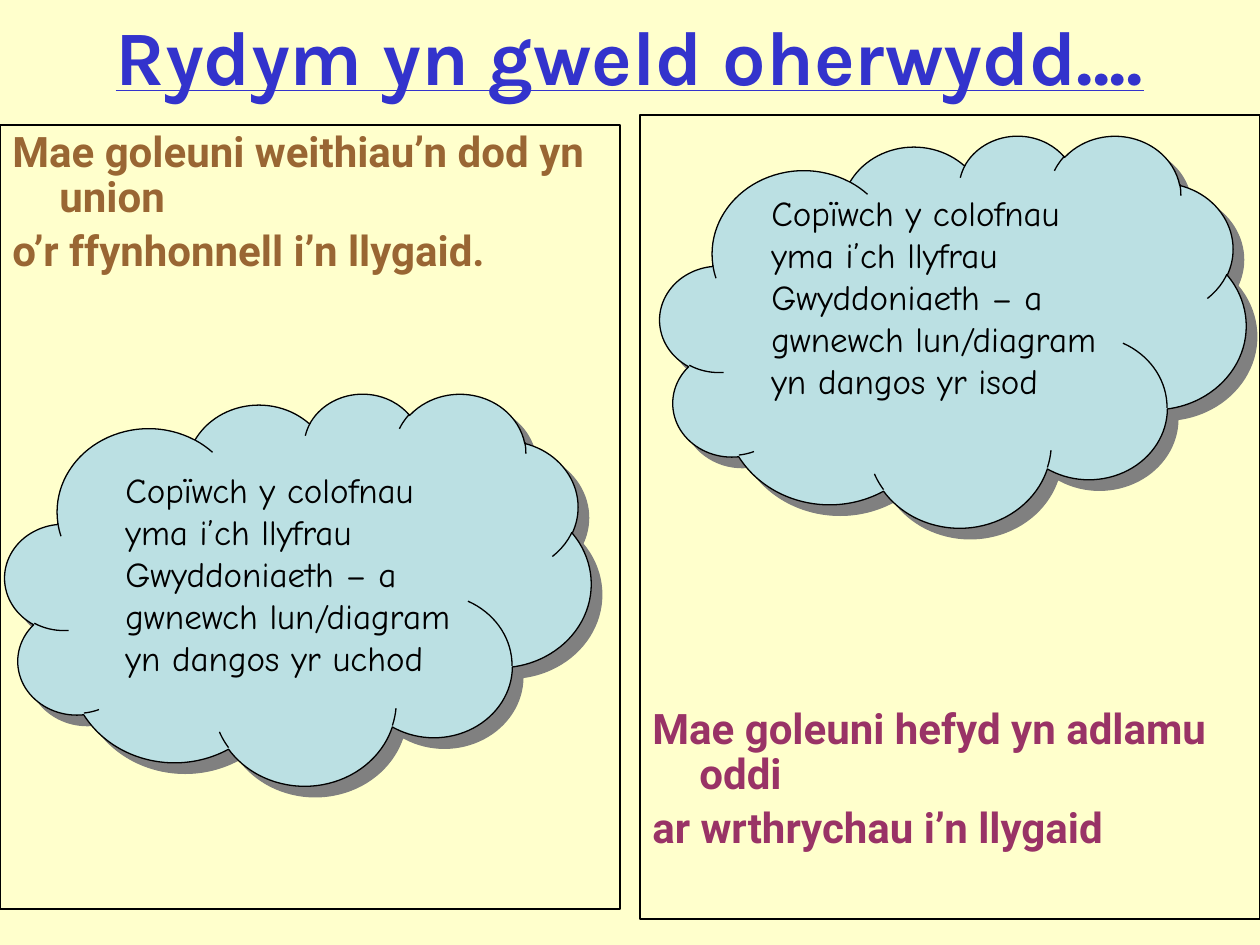
import pptx
import pptx.dml.color
import pptx.enum.shapes
import pptx.enum.text
import pptx.oxml.ns
import pptx.util
from lxml import etree

EMU_PER_PX = 914400 / 126
CLOUD_WIDTH, CLOUD_HEIGHT = 586, 392


def px(length):
    return pptx.util.Emu(round(length * EMU_PER_PX))


def rgb(color):
    return pptx.dml.color.RGBColor.from_string(color)


def add_run(paragraph, text, font_name, size, color, bold=False, underline=False):
    run = paragraph.add_run()
    run.text = text
    run.font.name = font_name
    run.font.size = pptx.util.Pt(size)
    run.font.color.rgb = rgb(color)
    run.font.bold = bold
    run.font.underline = underline


def set_outline(shape):
    shape.line.color.rgb = rgb("000000")
    shape.line.width = pptx.util.Pt(0.75)


def add_title(slide, text):
    title = slide.shapes.title
    title.left, title.top, title.width, title.height = map(px, (63, -24, 1134, 158))
    frame = title.text_frame
    frame.auto_size = pptx.enum.text.MSO_AUTO_SIZE.NONE
    frame.vertical_anchor = pptx.enum.text.MSO_ANCHOR.MIDDLE
    paragraph = frame.paragraphs[0]
    paragraph.alignment = pptx.enum.text.PP_ALIGN.CENTER
    add_run(paragraph, text, "Karla", 44, "3333CC", bold=True, underline=True)


def add_column(slide, left, top, width, height, text_offset, color, lines):
    """Outlined column whose hanging-indent text starts text_offset below its top."""
    column = slide.shapes.add_textbox(px(left), px(top), px(width), px(height))
    set_outline(column)
    frame = column.text_frame
    frame.word_wrap = True
    frame.margin_top = px(text_offset)
    for index, line in enumerate(lines):
        paragraph = frame.add_paragraph() if index else frame.paragraphs[0]
        paragraph.line_spacing = 0.9
        paragraph.space_before = pptx.util.Pt(4.8 if index else 0)
        properties = paragraph._p.get_or_add_pPr()
        properties.set("marL", str(px(47)))
        properties.set("indent", str(px(-47)))
        add_run(paragraph, line, "Roboto", 24, color, bold=True)


def add_hard_shadow(shape):
    effects = etree.SubElement(shape._element.spPr, pptx.oxml.ns.qn("a:effectLst"))
    shadow = etree.SubElement(
        effects, pptx.oxml.ns.qn("a:outerShdw"),
        dist=str(pptx.util.Pt(8.5)), dir=str(45 * 60000), algn="ctr", rotWithShape="0")
    etree.SubElement(shadow, pptx.oxml.ns.qn("a:srgbClr"), val="808080")


def add_cloud(slide, left, top):
    cloud = slide.shapes.add_shape(
        pptx.enum.shapes.MSO_SHAPE.CLOUD,
        px(left), px(top), px(CLOUD_WIDTH), px(CLOUD_HEIGHT))
    cloud.fill.solid()
    cloud.fill.fore_color.rgb = rgb("BBE0E3")
    set_outline(cloud)
    add_hard_shadow(cloud)


def add_instruction(slide, left, top, text):
    box = slide.shapes.add_textbox(px(left), px(top), px(367), px(265))
    box.text_frame.word_wrap = True
    add_run(box.text_frame.paragraphs[0], text, "Comic Neue", 20, "000000")


def main():
    presentation = pptx.Presentation()
    presentation.slide_width, presentation.slide_height = px(1260), px(945)
    slide = presentation.slides.add_slide(presentation.slide_layouts[5])
    slide.background.fill.solid()
    slide.background.fill.fore_color.rgb = rgb("FFFFCC")

    add_title(slide, "Rydym yn gweld oherwydd....")
    add_column(slide, 0, 125, 620, 784, 6, "996633",
               ["Mae goleuni weithiau’n dod yn union", "o’r ffynhonnell i’n llygaid."])
    add_column(slide, 640, 115, 620, 804, 593, "993366",
               ["Mae goleuni hefyd yn adlamu oddi", "ar wrthrychau i’n llygaid"])

    add_cloud(slide, 5, 393)
    add_cloud(slide, 660, 135)
    instruction = ("Copïwch y colofnau yma i’ch llyfrau Gwyddoniaeth – a gwnewch "
                   "lun/diagram yn dangos yr ")
    add_instruction(slide, 113, 462, instruction + "uchod")
    add_instruction(slide, 759, 185, instruction + "isod")

    presentation.save("out.pptx")


if __name__ == "__main__":
    main()
